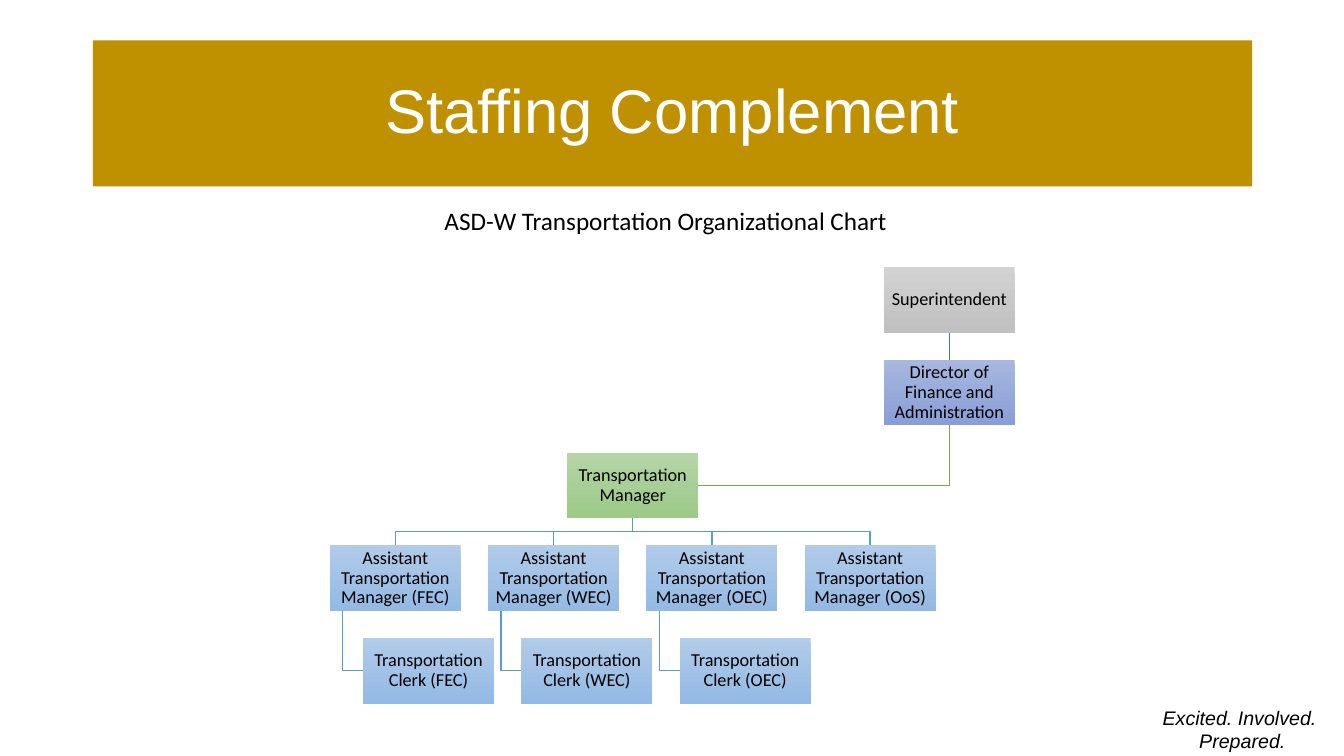
"""Build the Staffing Complement slide with its transportation organizational chart."""
from pptx import Presentation
from pptx.dml.color import RGBColor
from pptx.enum.shapes import MSO_CONNECTOR, MSO_SHAPE
from pptx.enum.text import MSO_ANCHOR, MSO_AUTO_SIZE, PP_ALIGN
from pptx.oxml.ns import qn
from pptx.util import Inches, Pt

TITLE = "Staffing Complement"
SUBTITLE = "ASD-W Transportation Organizational Chart"
MOTTO = "Excited. Involved.\v Prepared."

GRAY = ("D2D2D2", "C0C0C0")
INDIGO = ("A8B7DF", "889ED7")
GREEN = ("B5D5A7", "9CC987")
BLUE = ("B1CBE9", "93B9E4")
INDIGO_LINE, GREEN_LINE, BLUE_LINE = "4472C4", "70AD47", "5B9BD5"

LEADERS = [
    ("Superintendent", 3.5, GRAY),
    ("Director of Finance and Administration", 3.5, INDIGO),
    ("Transportation Manager", 1.5, GREEN),
]
OFFICES = ["FEC", "WEC", "OEC", "OoS"]
CLERK_OFFICES = OFFICES[:3]

LEFT, TOP = Inches(3.27), Inches(2.65)
COLUMN, LEVEL = Inches(1.57), Inches(0.92)
BOX_W, BOX_H = Inches(1.3), Inches(0.65)
CLERK_INDENT, STEM_INDENT = Inches(0.33), Inches(0.13)

CHART_TEXT = {"name": "Calibri", "size": Pt(13)}
SUBTITLE_TEXT = {"name": "Calibri", "size": Pt(18)}
MOTTO_TEXT = {"name": "Arial", "size": Pt(14), "italic": True}
TITLE_TEXT = {"name": "Arial", "size": Pt(44)}


def rgb(value):
    return RGBColor.from_string(value)


def write(sp, text, font, align, color="000000", spacing=None):
    p = sp.text_frame.paragraphs[0]
    p.text = text
    p.alignment = align
    p.line_spacing = spacing
    for r in p.runs:
        for name, value in font.items():
            setattr(r.font, name, value)
        r.font.color.rgb = rgb(color)


def add_note(slide, text, place, font, align):
    sp = slide.shapes.add_textbox(*map(Inches, place))
    sp.text_frame.word_wrap = True
    sp.text_frame.auto_size = MSO_AUTO_SIZE.SHAPE_TO_FIT_TEXT
    write(sp, text, font, align)


def add_box(slide, text, column, level, colors, indent=0):
    x, y = LEFT + round(column * COLUMN) + indent, TOP + level * LEVEL
    sp = slide.shapes.add_shape(MSO_SHAPE.RECTANGLE, x, y, BOX_W, BOX_H)
    sp.shadow.inherit = False
    sp.line.fill.background()
    sp.fill.gradient()
    sp.fill.gradient_angle = 270
    for stop, color in zip(sp.fill.gradient_stops, colors):
        stop.color.rgb = rgb(color)
    tf = sp.text_frame
    tf.word_wrap = True
    tf.vertical_anchor = MSO_ANCHOR.MIDDLE
    for side in ("left", "top", "right", "bottom"):
        setattr(tf, f"margin_{side}", Inches(0.01))
    write(sp, text, CHART_TEXT, PP_ALIGN.CENTER, spacing=0.9)
    return sp


def add_path(slide, points, color):
    builder = slide.shapes.build_freeform(*points[0], scale=1.0)
    builder.add_line_segments(points[1:], close=False)
    sp = builder.convert_to_shape()
    sp.shadow.inherit = False
    sp.fill.background()
    sp.line.color.rgb = rgb(color)
    sp.line.width = Pt(1)


def add_straight(slide, upper, lower, color):
    line = slide.shapes.add_connector(MSO_CONNECTOR.STRAIGHT, 0, 0, 0, 0)
    line.begin_connect(upper, 2)
    line.end_connect(lower, 0)
    line.line.color.rgb = rgb(color)
    line.line.width = Pt(1)
    sp_pr = line._element.spPr
    sp_pr.append(sp_pr.makeelement(qn("a:effectLst"), {}))


def center(sp):
    return sp.left + sp.width // 2


def middle(sp):
    return sp.top + sp.height // 2


def bottom(sp):
    return sp.top + sp.height


def add_title(slide):
    sp = slide.shapes.title
    place = {"left": 0.92, "top": 0.4, "width": 11.5, "height": 1.45}
    for name, value in place.items():
        setattr(sp, name, Inches(value))
    sp.fill.solid()
    sp.fill.fore_color.rgb = rgb("BF9000")
    sp.text_frame.vertical_anchor = MSO_ANCHOR.MIDDLE
    write(sp, TITLE, TITLE_TEXT, PP_ALIGN.CENTER, "FFFFFF", 0.9)


def add_org_chart(slide):
    chief, director, manager = [
        add_box(slide, text, column, level, colors)
        for level, (text, column, colors) in enumerate(LEADERS)
    ]
    assistants = [
        add_box(slide, f"Assistant Transportation Manager ({office})", i, 3, BLUE)
        for i, office in enumerate(OFFICES)
    ]
    clerks = [
        add_box(slide, f"Transportation Clerk ({office})", i, 4, BLUE, CLERK_INDENT)
        for i, office in enumerate(CLERK_OFFICES)
    ]

    add_straight(slide, chief, director, INDIGO_LINE)
    add_path(slide, [
        (center(director), bottom(director)),
        (center(director), middle(manager)),
        (manager.left + manager.width, middle(manager)),
    ], GREEN_LINE)
    for sp in assistants:
        bus = (bottom(manager) + sp.top) // 2
        add_path(slide, [
            (center(manager), bottom(manager)),
            (center(manager), bus),
            (center(sp), bus),
            (center(sp), sp.top),
        ], BLUE_LINE)
    for boss, clerk in zip(assistants, clerks):
        stem = boss.left + STEM_INDENT
        add_path(slide, [
            (stem, bottom(boss)),
            (stem, middle(clerk)),
            (clerk.left, middle(clerk)),
        ], BLUE_LINE)


def main():
    prs = Presentation()
    prs.slide_width, prs.slide_height = Inches(13.33), Inches(7.5)
    slide = prs.slides.add_slide(prs.slide_layouts[5])
    add_note(slide, MOTTO, (11.02, 6.95, 2.55, 0.57), MOTTO_TEXT, PP_ALIGN.CENTER)
    add_title(slide)
    add_org_chart(slide)
    add_note(slide, SUBTITLE, (4.31, 1.99, 4.71, 0.4), SUBTITLE_TEXT, PP_ALIGN.LEFT)
    prs.save("out.pptx")


if __name__ == "__main__":
    main()
